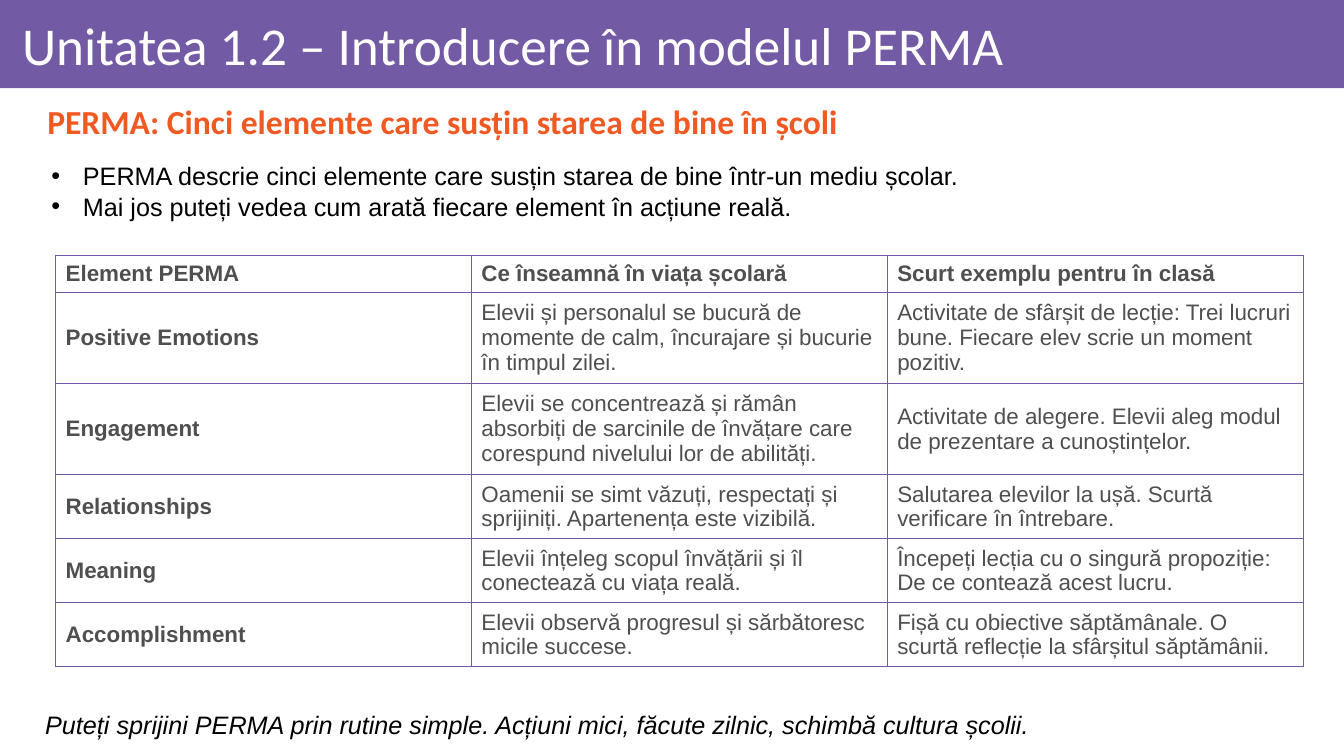
from dataclasses import dataclass

from lxml import etree
from pptx import Presentation
from pptx.dml.color import RGBColor
from pptx.enum.shapes import MSO_SHAPE
from pptx.enum.text import MSO_ANCHOR, PP_ALIGN
from pptx.oxml.ns import qn
from pptx.util import Emu, Pt

RECT = MSO_SHAPE.RECTANGLE
TOP, MIDDLE = MSO_ANCHOR.TOP, MSO_ANCHOR.MIDDLE
LEFT, JUSTIFY = PP_ALIGN.LEFT, PP_ALIGN.JUSTIFY
EMU_PER_PX = 9525


@dataclass(frozen=True)
class Theme:
    purple: str = "735AA5"
    orange: str = "F05A22"
    white: str = "FFFFFF"
    black: str = "000000"
    grey: str = "4F4F50"
    head: str = "Calibri"
    body: str = "Arial"
    title_size: int = 38
    lead_size: int = 24
    text_size: int = 18
    cell_size: int = 16
    border: float = 0.75


THEME = Theme()


@dataclass(frozen=True)
class Style:
    font: str
    size: int
    color: str
    bold: bool = False
    italic: bool = False


@dataclass(frozen=True)
class Block:
    """A text box; margin and indent are the paragraph's left edge and first line."""
    box: tuple[int, int, int, int]
    lines: tuple[str, ...]
    style: Style
    anchor: MSO_ANCHOR = TOP
    align: PP_ALIGN = LEFT
    inset: tuple[int, int, int, int] = (10, 5, 10, 5)
    margin: int = 0
    indent: int = 0
    spacing: float = 1.0
    before: int = 0
    bullet: str = ""


BLOCKS = (
    Block((11, 9, 1254, 75), ("Unitatea 1.2 – Introducere în modelul PERMA",),
          Style(THEME.head, THEME.title_size, THEME.white),
          anchor=MIDDLE, inset=(10, 6, 6, 6), spacing=0.9),
    Block((11, 89, 1254, 58),
          ("PERMA: Cinci elemente care susțin starea de bine în școli",),
          Style(THEME.head, THEME.lead_size, THEME.orange, bold=True),
          anchor=MIDDLE, align=JUSTIFY, margin=48, indent=-24,
          spacing=0.9, before=10),
    Block((39, 148, 969, 68),
          ("PERMA descrie cinci elemente care susțin starea de bine "
           "într-un mediu școlar.",
           "Mai jos puteți vedea cum arată fiecare element în acțiune reală."),
          Style(THEME.body, THEME.text_size, THEME.black),
          margin=30, indent=-30, bullet="•"),
    Block((33, 671, 1215, 40),
          ("Puteți sprijini PERMA prin rutine simple. Acțiuni mici, "
           "făcute zilnic, schimbă cultura școlii.",),
          Style(THEME.body, THEME.text_size, THEME.black, italic=True)),
)

GRID_LEFT, GRID_TOP, COL_WIDTH = 53, 243, 396
ROW_HEIGHTS = (35, 87, 87, 61, 61, 61)
ROWS = (
    ("Element PERMA", "Ce înseamnă în viața școlară",
     "Scurt exemplu pentru în clasă"),
    ("Positive Emotions",
     "Elevii și personalul se bucură de momente de calm, încurajare și "
     "bucurie în timpul zilei.",
     "Activitate de sfârșit de lecție: Trei lucruri bune. Fiecare elev "
     "scrie un moment pozitiv."),
    ("Engagement",
     "Elevii se concentrează și rămân absorbiți de sarcinile de învățare "
     "care corespund nivelului lor de abilități.",
     "Activitate de alegere. Elevii aleg modul de prezentare a "
     "cunoștințelor."),
    ("Relationships",
     "Oamenii se simt văzuți, respectați și sprijiniți. Apartenența este "
     "vizibilă.",
     "Salutarea elevilor la ușă. Scurtă verificare în întrebare."),
    ("Meaning",
     "Elevii înțeleg scopul învățării și îl conectează cu viața reală.",
     "Începeți lecția cu o singură propoziție: De ce contează acest lucru."),
    ("Accomplishment",
     "Elevii observă progresul și sărbătoresc micile succese.",
     "Fișă cu obiective săptămânale. O scurtă reflecție la sfârșitul "
     "săptămânii."),
)


def px(count: int) -> Emu:
    return Emu(count * EMU_PER_PX)


def paint(para, style: Style) -> None:
    for run in para.runs:
        font = run.font
        font.name, font.size = style.font, Pt(style.size)
        font.bold, font.italic = style.bold, style.italic
        font.color.rgb = RGBColor.from_string(style.color)


def set_indent(para, block: Block) -> None:
    props = para._p.get_or_add_pPr()
    props.set("marL", str(px(block.margin)))
    props.set("indent", str(px(block.indent)))
    if block.bullet:
        color = etree.SubElement(props, qn("a:buClr"))
        etree.SubElement(color, qn("a:srgbClr"), val=block.style.color)
        etree.SubElement(props, qn("a:buFont"), typeface=THEME.body)
        etree.SubElement(props, qn("a:buChar"), char=block.bullet)


def add_block(slide, block: Block) -> None:
    frame = slide.shapes.add_textbox(*map(px, block.box)).text_frame
    frame.word_wrap = True
    frame.vertical_anchor = block.anchor
    (frame.margin_left, frame.margin_top,
     frame.margin_right, frame.margin_bottom) = map(px, block.inset)
    frame.text = "\n".join(block.lines)
    for para in frame.paragraphs:
        para.alignment = block.align
        para.line_spacing = block.spacing
        para.space_before = Pt(block.before)
        set_indent(para, block)
        paint(para, block.style)


def add_borders(cell) -> None:
    props = cell._tc.get_or_add_tcPr()
    for spot, side in enumerate(("lnL", "lnR", "lnT", "lnB")):
        line = etree.Element(qn(f"a:{side}"), w=str(Pt(THEME.border)))
        fill = etree.SubElement(line, qn("a:solidFill"))
        etree.SubElement(fill, qn("a:srgbClr"), val=THEME.purple)
        props.insert(spot, line)


def add_grid(slide) -> None:
    cols = len(ROWS[0])
    table = slide.shapes.add_table(
        len(ROWS), cols, px(GRID_LEFT), px(GRID_TOP),
        px(COL_WIDTH * cols), px(sum(ROW_HEIGHTS))).table
    table.first_row = table.horz_banding = False
    for col in table.columns:
        col.width = px(COL_WIDTH)
    for row, height in zip(table.rows, ROW_HEIGHTS):
        row.height = px(height)
    for r, texts in enumerate(ROWS):
        for c, text in enumerate(texts):
            cell = table.cell(r, c)
            cell.text = text
            cell.vertical_anchor = MIDDLE
            cell.fill.background()
            add_borders(cell)
            bold = r == 0 or c == 0
            paint(cell.text_frame.paragraphs[0],
                  Style(THEME.body, THEME.cell_size, THEME.grey, bold))


def add_band(slide) -> None:
    band = slide.shapes.add_shape(RECT, 0, 0, px(1280), px(84))
    band.shadow.inherit = False
    band.fill.solid()
    band.fill.fore_color.rgb = RGBColor.from_string(THEME.purple)
    band.line.fill.background()


def main() -> None:
    deck = Presentation()
    deck.slide_width, deck.slide_height = px(1280), px(720)
    slide = deck.slides.add_slide(deck.slide_layouts[6])
    add_band(slide)
    for block in BLOCKS:
        add_block(slide, block)
    add_grid(slide)
    deck.save("out.pptx")


if __name__ == "__main__":
    main()
